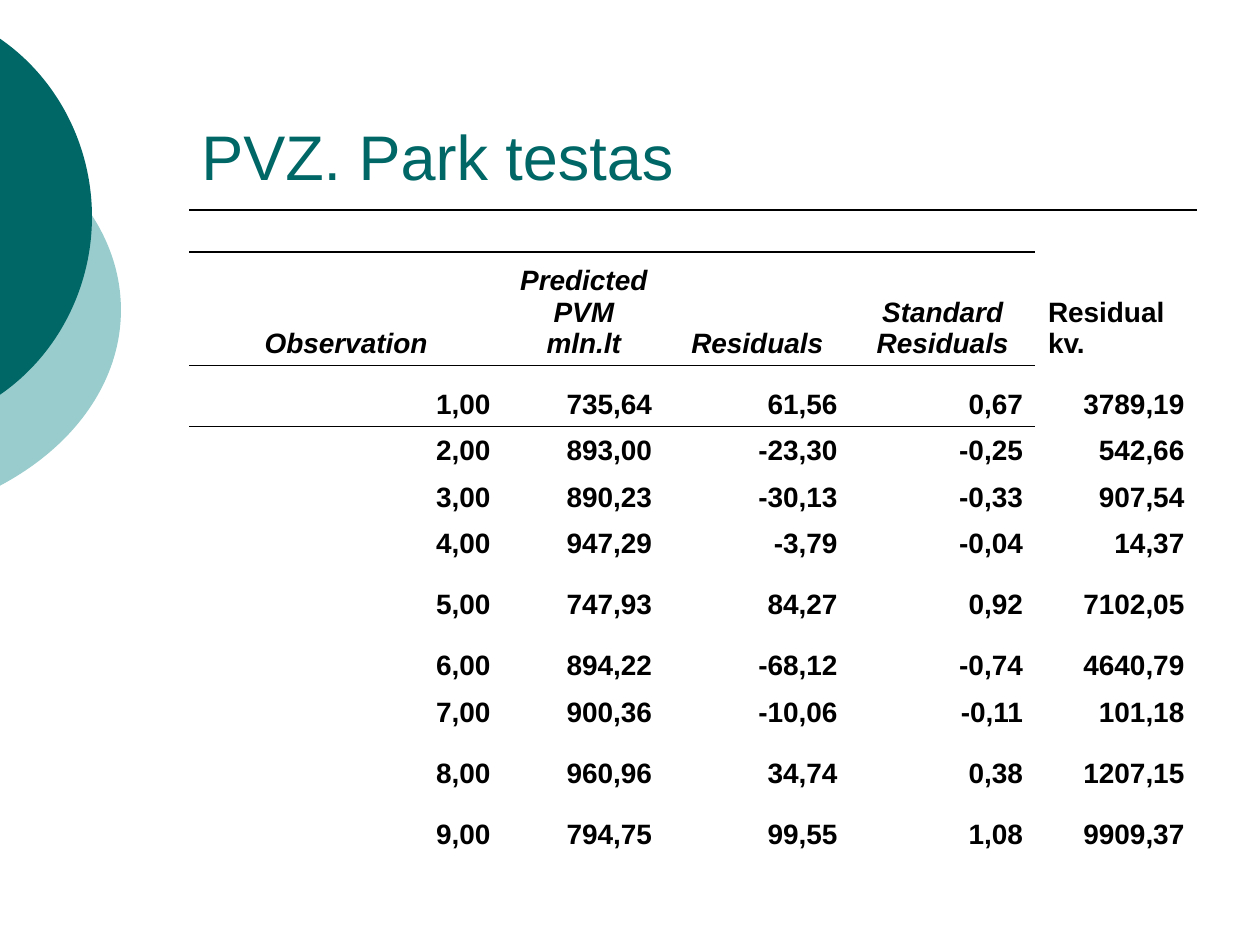
from pptx import Presentation
from pptx.dml.color import RGBColor
from pptx.enum.shapes import MSO_CONNECTOR
from pptx.enum.text import MSO_ANCHOR, PP_ALIGN
from pptx.oxml.ns import qn
from pptx.util import Inches, Pt
from lxml.etree import SubElement

COLORS = {"teal": "006666", "pale": "99CCCC", "ink": "000000"}
PLAIN = "{2D5ABB26-0587-4C30-8999-92F81FD0307C}"  # table style: no grid

HEADS = ["Observation", "Predicted PVM mln.lt", "Residuals",
         "Standard Residuals", "Residual kv."]
ROWS = [
    ["1,00", "735,64", "61,56", "0,67", "3789,19"],
    ["2,00", "893,00", "-23,30", "-0,25", "542,66"],
    ["3,00", "890,23", "-30,13", "-0,33", "907,54"],
    ["4,00", "947,29", "-3,79", "-0,04", "14,37"],
    ["5,00", "747,93", "84,27", "0,92", "7102,05"],
    ["6,00", "894,22", "-68,12", "-0,74", "4640,79"],
    ["7,00", "900,36", "-10,06", "-0,11", "101,18"],
    ["8,00", "960,96", "34,74", "0,38", "1207,15"],
    ["9,00", "794,75", "99,55", "1,08", "9909,37"],
]
WIDTHS = [2.49, 1.28, 1.47, 1.47, 1.28]
TALL, SHORT = 0.49, 0.37
HEIGHTS = [0.9, TALL, SHORT, SHORT, SHORT, TALL, TALL, SHORT, TALL, TALL]


def scale(sizes, total):
    """Stretch the sizes so that they add up to the total."""
    return [Inches(size * total / sum(sizes)) for size in sizes]


class Deck:
    """Holds the style and the current slide."""
    font = "Arial"

    def __init__(self, prs):
        self.slide = prs.slides.add_slide(prs.slide_layouts[6])
        self.shapes = self.slide.shapes

    def color(self, name):
        return RGBColor.from_string(COLORS[name])

    def style(self, para, size, color, bold=False, italic=False):
        for run in para.runs:
            font = run.font
            font.name, font.size = self.font, Pt(size)
            font.bold, font.italic = bold, italic
            font.color.rgb = self.color(color)

    def arc(self, frame, top, bend, color):
        """Circle part cut by the left edge: upper curve, then its mirror."""
        left, high, width, height = [Inches(n) for n in frame]
        edge = -0.01
        mid = bend[-1][1]
        lower = [(x, 2 * mid - y) for x, y in [bend[1], bend[0], (edge, top)]]
        pen = self.shapes.build_freeform(left, high)
        pen.add_line_segments([(left + width, high), (left + width, high + height)])
        shape = pen.convert_to_shape()
        shape.shadow.inherit = False
        shape.fill.solid()
        shape.fill.fore_color.rgb = self.color(color)
        shape.line.fill.background()
        # Swap the straight outline for two curves
        track = next(shape._element.iter(qn("a:path")))
        for child in list(track):
            track.remove(child)
        track.set("w", str(width))
        track.set("h", str(height))
        for kind, points in [("moveTo", [(edge, top)]), ("cubicBezTo", bend),
                             ("cubicBezTo", lower)]:
            step = SubElement(track, qn("a:" + kind))
            for x, y in points:
                SubElement(step, qn("a:pt"), x=str(Inches(x) - left),
                           y=str(Inches(y) - high))
        SubElement(track, qn("a:close"))

    def rule(self, left, right, y):
        line = self.shapes.add_connector(
            MSO_CONNECTOR.STRAIGHT, Inches(left), Inches(y), Inches(right), Inches(y))
        line.line.color.rgb = self.color("ink")
        line.line.width = Pt(1)
        SubElement(line._element.spPr, qn("a:effectLst"))

    def title(self, text, left, top, width, height):
        box = self.shapes.add_textbox(
            Inches(left), Inches(top), Inches(width), Inches(height))
        frame = box.text_frame
        frame.word_wrap = True
        frame.vertical_anchor = MSO_ANCHOR.BOTTOM
        frame.text = text
        self.style(frame.paragraphs[0], 36, "teal")

    def border(self, cell, side):
        props = cell._tc.get_or_add_tcPr()
        line = SubElement(props, qn("a:ln" + side), w=str(Pt(1)))
        fill = SubElement(line, qn("a:solidFill"))
        SubElement(fill, qn("a:srgbClr"), val=COLORS["ink"])

    def cell(self, cell, text, align, sides="", italic=False):
        for side in sides:
            self.border(cell, side)
        cell.fill.background()
        cell.vertical_anchor = MSO_ANCHOR.BOTTOM
        cell.text = text
        para = cell.text_frame.paragraphs[0]
        para.alignment = align
        self.style(para, 16, "ink", True, italic)

    def table(self, left, top, width, height):
        grid = self.shapes.add_table(
            len(HEIGHTS), len(WIDTHS), Inches(left), Inches(top),
            Inches(width), Inches(height)).table
        grid.first_row = grid.horz_banding = False
        next(grid._tbl.iter(qn("a:tableStyleId"))).text = PLAIN
        for col, size in zip(grid.columns, scale(WIDTHS, width)):
            col.width = size
        for row, size in zip(grid.rows, scale(HEIGHTS, height)):
            row.height = size
        # The last column stands outside the ruled header
        last = len(HEADS) - 1
        for c, head in enumerate(HEADS):
            ruled = c < last
            self.cell(grid.cell(0, c), head,
                      PP_ALIGN.CENTER if ruled else PP_ALIGN.LEFT,
                      "TB" if ruled else "", ruled)
        for r, row in enumerate(ROWS, 1):
            for c, value in enumerate(row):
                self.cell(grid.cell(r, c), value, PP_ALIGN.RIGHT,
                          "T" if r == 1 and c < last else "")


def main():
    prs = Presentation()
    prs.slide_width, prs.slide_height = Inches(10), Inches(7.5)
    deck = Deck(prs)

    # Circles at the left edge
    deck.arc((-3.54, 0.75, 4.5, 3.42), 1.06,
             [(0.6, 1.38), (0.96, 1.9), (0.96, 2.46)], "pale")
    deck.arc((-2.65, 0, 3.38, 3.45), 0.3,
             [(0.46, 0.62), (0.73, 1.16), (0.73, 1.72)], "teal")

    # Title and its rule
    deck.rule(1.5, 9.5, 5 / 3)
    deck.title("PVZ. Park testas", 1.5, 0.33, 8, 1.25)

    # Residuals
    deck.table(1.5, 2, 8, 4.8)
    prs.save("out.pptx")


if __name__ == "__main__":
    main()
